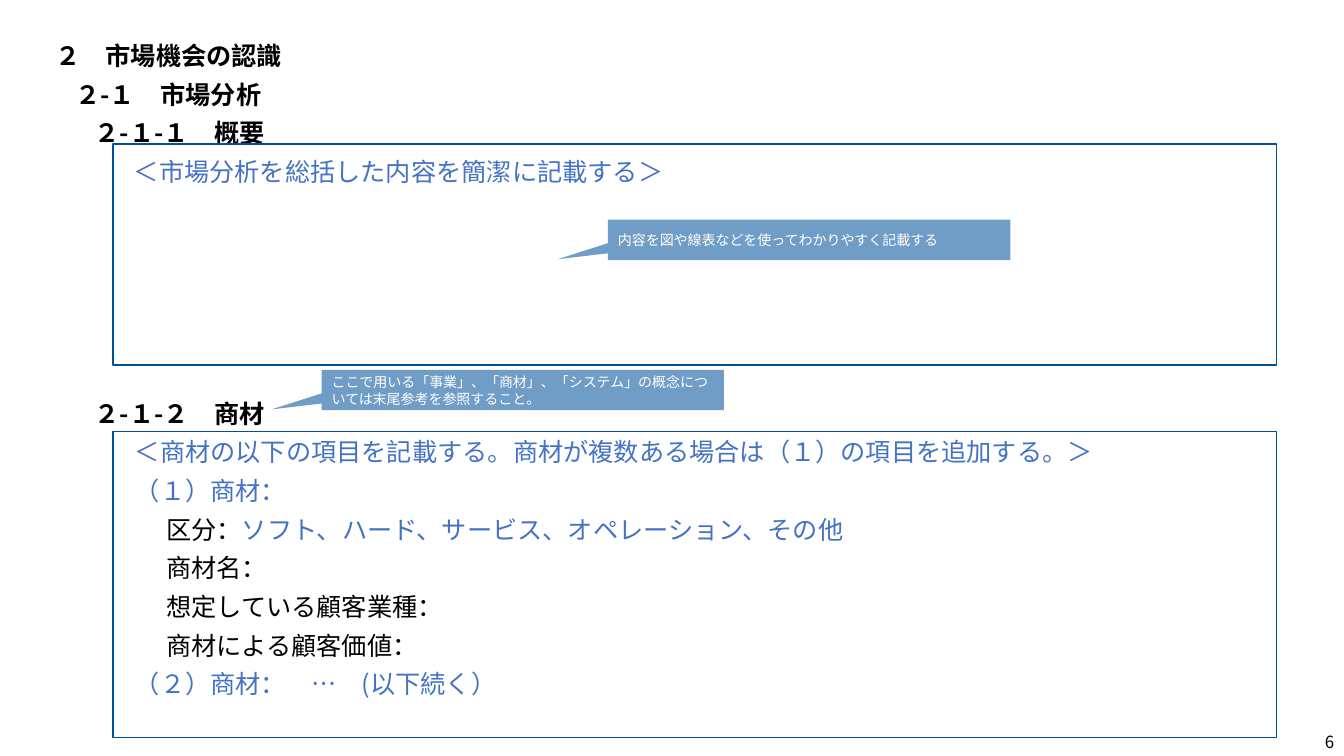
import pptx
import pptx.util
import pptx.dml.color
import pptx.enum.shapes
import pptx.enum.text
import pptx.oxml.ns
import lxml.etree

WIDE, HIGH = 13.33, 7.5
HUES = {"navy": "005298", "blue": "4472C4", "black": "000000", "white": "FFFFFF"}
SANS, LATIN = "Noto Sans CJK JP", "Arial"
LEFT, SPAN = 0.45, 12.21
EDGE = 1.12
RIGHT = LEFT + SPAN

STYLES = {
    "head": (18, SANS, "black", True),
    "hint": (18, SANS, "blue", False),
    "item": (18, SANS, "black", False),
    "note": (10, LATIN, "white", False),
    "page": (12, SANS, "black", False),
}
HINT, ITEM = (1.06, -0.27), (1.37, -0.27)

MARKET = [
    ((0, 0), [("２　市場機会の認識", "head")]),
    ((0.2, 0), [("２-１　市場分析", "head")]),
    ((0.98, -0.59), [("２-１-１　概要", "head")]),
    ((0.78, 0), [("＜市場分析を総括した内容を簡潔に記載する＞", "hint")]),
]
GOODS = [
    ((0.39, 0), [("２-１-２　商材", "head")]),
    (HINT, [("＜商材の以下の項目を記載する。商材が複数ある場合は（１）の項目を追加する。＞", "hint")]),
    (HINT, [("（１）商材：", "hint")]),
    (ITEM, [("区分：", "item"), ("ソフト、ハード、サービス、オペレーション、その他", "hint")]),
    (ITEM, [("商材名：", "item")]),
    (ITEM, [("想定している顧客業種：", "item")]),
    (ITEM, [("商材による顧客価値：", "item")]),
    (HINT, [("（２）商材：　…　(以下続く）", "hint")]),
]
CHART_TIP = "内容を図や線表などを使ってわかりやすく記載する"
TERMS_TIP = "ここで用いる「事業」、「商材」、「システム」の概念については末尾参考を参照すること。"

deck = pptx.Presentation()
deck.slide_width = pptx.util.Inches(WIDE)
deck.slide_height = pptx.util.Inches(HIGH)
slide = deck.slides.add_slide(deck.slide_layouts[6])
KIND = pptx.enum.shapes.MSO_SHAPE
ALIGN = pptx.enum.text.PP_ALIGN
ANCHOR = pptx.enum.text.MSO_ANCHOR
FIT = pptx.enum.text.MSO_AUTO_SIZE


def color(name):
    return pptx.dml.color.RGBColor.from_string(HUES[name])


def place(*box):
    return [pptx.util.Inches(v) for v in box]


def write(para, text, style):
    size, face, hue, bold = STYLES[style]
    run = para.add_run()
    run.text = text
    run.font.size = pptx.util.Pt(size)
    run.font.name = face
    run.font.bold = bold
    run.font.color.rgb = color(hue)
    east = lxml.etree.SubElement(run.font._element, pptx.oxml.ns.qn("a:ea"))
    east.set("typeface", SANS)


def outline(top, height, lines):
    frame = slide.shapes.add_textbox(*place(LEFT, top, SPAN, height)).text_frame
    frame.word_wrap = True
    frame.auto_size = FIT.SHAPE_TO_FIT_TEXT
    for i, (indent, runs) in enumerate(lines):
        para = frame.add_paragraph() if i else frame.paragraphs[0]
        para.space_before = pptx.util.Pt(6)
        props = para._p.get_or_add_pPr()
        for key, inch in zip(("marL", "indent"), indent):
            props.set(key, str(int(pptx.util.Inches(inch))))
        for text, style in runs:
            write(para, text, style)


def panel(top, height):
    shape = slide.shapes.add_shape(KIND.RECTANGLE, *place(EDGE, top, RIGHT - EDGE, height))
    shape.shadow.inherit = False
    shape.fill.background()
    shape.line.color.rgb = color("navy")
    shape.line.width = pptx.util.Pt(1)


def callout(left, top, text):
    shape = slide.shapes.add_shape(KIND.RECTANGULAR_CALLOUT, *place(left, top, 3.99, 0.4))
    shape.adjustments[0], shape.adjustments[1] = -0.625, 0.481
    shape.shadow.inherit = False
    shape.line.fill.background()
    shape.fill.solid()
    shape.fill.fore_color.rgb = color("navy")
    tint = shape._element.spPr.find(".//" + pptx.oxml.ns.qn("a:srgbClr"))
    lxml.etree.SubElement(tint, pptx.oxml.ns.qn("a:alpha")).set("val", "56000")
    frame = shape.text_frame
    frame.word_wrap = True
    frame.vertical_anchor = ANCHOR.MIDDLE
    frame.paragraphs[0].alignment = ALIGN.LEFT
    write(frame.paragraphs[0], text, "note")


def number(text):
    wide, high = 0.85, 0.29
    frame = slide.shapes.add_textbox(*place(WIDE - wide, HIGH - high, wide, high)).text_frame
    frame.word_wrap = True
    frame.vertical_anchor = ANCHOR.MIDDLE
    frame.paragraphs[0].alignment = ALIGN.RIGHT
    write(frame.paragraphs[0], text, "page")


outline(0.35, 1.57, MARKET)
callout(6.03, 2.18, CHART_TIP)
panel(1.43, 2.19)
number("6")
outline(3.9, 3.11, GOODS)
panel(4.28, 3.04)
callout(3.19, 3.67, TERMS_TIP)

deck.save("out.pptx")
